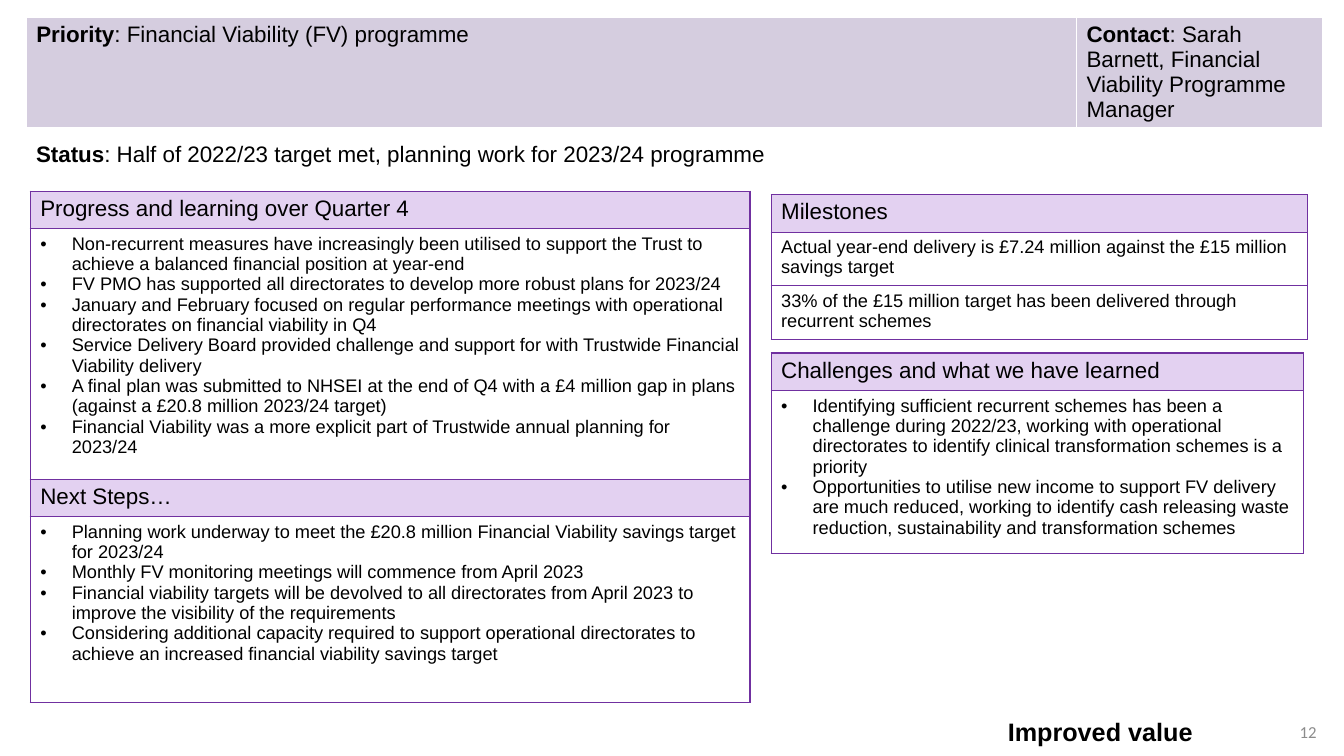
from dataclasses import dataclass

from lxml.etree import SubElement
from pptx import Presentation
from pptx.dml.color import RGBColor
from pptx.enum.text import MSO_ANCHOR as Anchor, MSO_AUTO_SIZE as AutoSize, PP_ALIGN as Align
from pptx.oxml.ns import qn
from pptx.util import Pt

BLACK, WHITE, GREY = "000000", "FFFFFF", "8C8C8C"
PURPLE, LILAC, MAUVE = "7030A0", "E3D1F1", "D5CDDF"
HEADING_SIZE, BODY_SIZE = 16, 13
BULLET_INDENT = 22.5


@dataclass
class Section:
    heading: str
    body_heights: list[float]
    bodies: list[list[str]]
    bulleted: bool = True


@dataclass
class Panel:
    left: float
    top: float
    width: float
    sections: list[Section]


@dataclass
class Label:
    left: float
    top: float
    width: float
    height: float
    text: str
    size: float
    color: str = BLACK
    font: str = "Arial"
    bold: bool = False
    lead: str = ""
    align: Align = Align.LEFT
    anchor: Anchor = Anchor.TOP
    wrap: bool = True
    line_spacing: float = 1.0


HEADING_HEIGHT = 26.8
PANELS = [
    Panel(21.6, 136.6, 514.1, [
        Section("Progress and learning over Quarter 4", [178.9], [[
            "Non-recurrent measures have increasingly been utilised to support the Trust to achieve a balanced financial position at year-end",
            "FV PMO has supported all directorates to develop more robust plans for 2023/24",
            "January and February focused on regular performance meetings with operational directorates on financial viability in Q4",
            "Service Delivery Board provided challenge and support for with Trustwide Financial Viability delivery",
            "A final plan was submitted to NHSEI at the end of Q4 with a £4 million gap in plans (against a £20.8 million 2023/24 target)",
            "Financial Viability was a more explicit part of Trustwide annual planning for 2023/24",
        ]]),
        Section("Next Steps…", [132.5], [[
            "Planning work underway to meet the £20.8 million Financial Viability savings target for 2023/24",
            "Monthly FV monitoring meetings will commence from April 2023",
            "Financial viability targets will be devolved to all directorates from April 2023 to improve the visibility of the requirements",
            "Considering additional capacity required to support operational directorates to achieve an increased financial viability savings target",
        ]]),
    ]),
    Panel(550.8, 139, 383, [
        Section("Milestones", [38.4, 38.4], [
            ["Actual year-end delivery is £7.24 million against the £15 million savings target"],
            ["33% of the £15 million target has been delivered through recurrent schemes"],
        ], bulleted=False),
    ]),
    Panel(550.8, 252.2, 380.2, [
        Section("Challenges and what we have learned", [116.2], [[
            "Identifying sufficient recurrent schemes has been a challenge during 2022/23, working with operational directorates to identify clinical transformation schemes is a priority",
            "Opportunities to utilise new income to support FV delivery are much reduced, working to identify cash releasing waste reduction, sustainability and transformation schemes",
        ]]),
    ]),
]
LABELS = [
    Label(18.7, 96.5, 545, 26.6, ": Half of 2022/23 target met, planning work for 2023/24 programme",
          HEADING_SIZE, lead="Status"),
    Label(712.8, 504.7, 152.6, 32.4, "Improved value", 18, bold=True, wrap=False, line_spacing=1.15),
    Label(731.5, 508.3, 216, 28.8, "12", 12, GREY, "Calibri", align=Align.RIGHT, anchor=Anchor.MIDDLE),
]


def rgb(color: str) -> RGBColor:
    return RGBColor.from_string(color)


def style(paragraph, size: float, color: str = BLACK, font: str = "Arial") -> None:
    paragraph.font.size = Pt(size)
    paragraph.font.name = font
    paragraph.font.color.rgb = rgb(color)


def write_lead(paragraph, lead: str, text: str) -> None:
    """Write a bold lead word followed by regular text."""
    for words, bold in ((lead, True), (text, False)):
        run = paragraph.add_run()
        run.text = words
        run.font.bold = bold


def add_bullet(paragraph) -> None:
    properties = paragraph._p.get_or_add_pPr()
    properties.set("marL", str(Pt(BULLET_INDENT)))
    properties.set("indent", str(-Pt(BULLET_INDENT)))
    SubElement(properties, qn("a:buFont")).set("typeface", "Arial")
    SubElement(properties, qn("a:buChar")).set("char", "•")


def format_cell(cell, fill: str | None, border: str) -> None:
    properties = cell._tc.get_or_add_tcPr()
    for side in ("a:lnL", "a:lnR", "a:lnT", "a:lnB"):
        line = SubElement(properties, qn(side), w=str(Pt(1)))
        SubElement(SubElement(line, qn("a:solidFill")), qn("a:srgbClr")).set("val", border)
    if fill:
        cell.fill.solid()
        cell.fill.fore_color.rgb = rgb(fill)
    else:
        cell.fill.background()


def add_grid(slide, left: float, top: float, widths: list[float], heights: list[float]):
    frame = slide.shapes.add_table(len(heights), len(widths), Pt(left), Pt(top),
                                   Pt(sum(widths)), Pt(sum(heights)))
    table = frame.table
    table.first_row = table.horz_banding = False
    for column, width in zip(table.columns, widths):
        column.width = Pt(width)
    for row, height in zip(table.rows, heights):
        row.height = Pt(height)
    return table


def fill_cell(cell, lines: list[str], size: float, bulleted: bool, fill: str | None) -> None:
    format_cell(cell, fill, PURPLE)
    frame = cell.text_frame
    for index, line in enumerate(lines):
        paragraph = frame.add_paragraph() if index else frame.paragraphs[0]
        paragraph.text = line
        if bulleted:
            add_bullet(paragraph)
        style(paragraph, size)


def add_panel(slide, panel: Panel) -> None:
    heights = [height for section in panel.sections
               for height in (HEADING_HEIGHT, *section.body_heights)]
    table = add_grid(slide, panel.left, panel.top, [panel.width], heights)
    cells = table.iter_cells()
    for section in panel.sections:
        fill_cell(next(cells), [section.heading], HEADING_SIZE, False, LILAC)
        for body in section.bodies:
            fill_cell(next(cells), body, BODY_SIZE, section.bulleted, None)


def add_banner(slide) -> None:
    table = add_grid(slide, 18.7, 12.6, [750.2, 175.7], [77.1])
    entries = [("Priority", ": Financial Viability (FV) programme"),
               ("Contact", ": Sarah Barnett, Financial Viability Programme Manager")]
    for cell, (lead, text) in zip(table.iter_cells(), entries):
        format_cell(cell, MAUVE, WHITE)
        paragraph = cell.text_frame.paragraphs[0]
        write_lead(paragraph, lead, text)
        style(paragraph, HEADING_SIZE)


def add_label(slide, label: Label) -> None:
    shape = slide.shapes.add_textbox(Pt(label.left), Pt(label.top), Pt(label.width), Pt(label.height))
    frame = shape.text_frame
    frame.word_wrap = label.wrap
    frame.auto_size = AutoSize.NONE
    frame.vertical_anchor = label.anchor
    paragraph = frame.paragraphs[0]
    paragraph.alignment = label.align
    paragraph.line_spacing = label.line_spacing
    if label.lead:
        write_lead(paragraph, label.lead, label.text)
    else:
        paragraph.text = label.text
        paragraph.font.bold = label.bold
    style(paragraph, label.size, label.color, label.font)


def main() -> None:
    presentation = Presentation()
    presentation.slide_width, presentation.slide_height = Pt(960), Pt(540)
    slide = presentation.slides.add_slide(presentation.slide_layouts[6])

    # Banner, then the tables, then the free-standing text
    add_banner(slide)
    for panel in PANELS:
        add_panel(slide, panel)
    for label in LABELS:
        add_label(slide, label)

    presentation.save("out.pptx")


if __name__ == "__main__":
    main()
